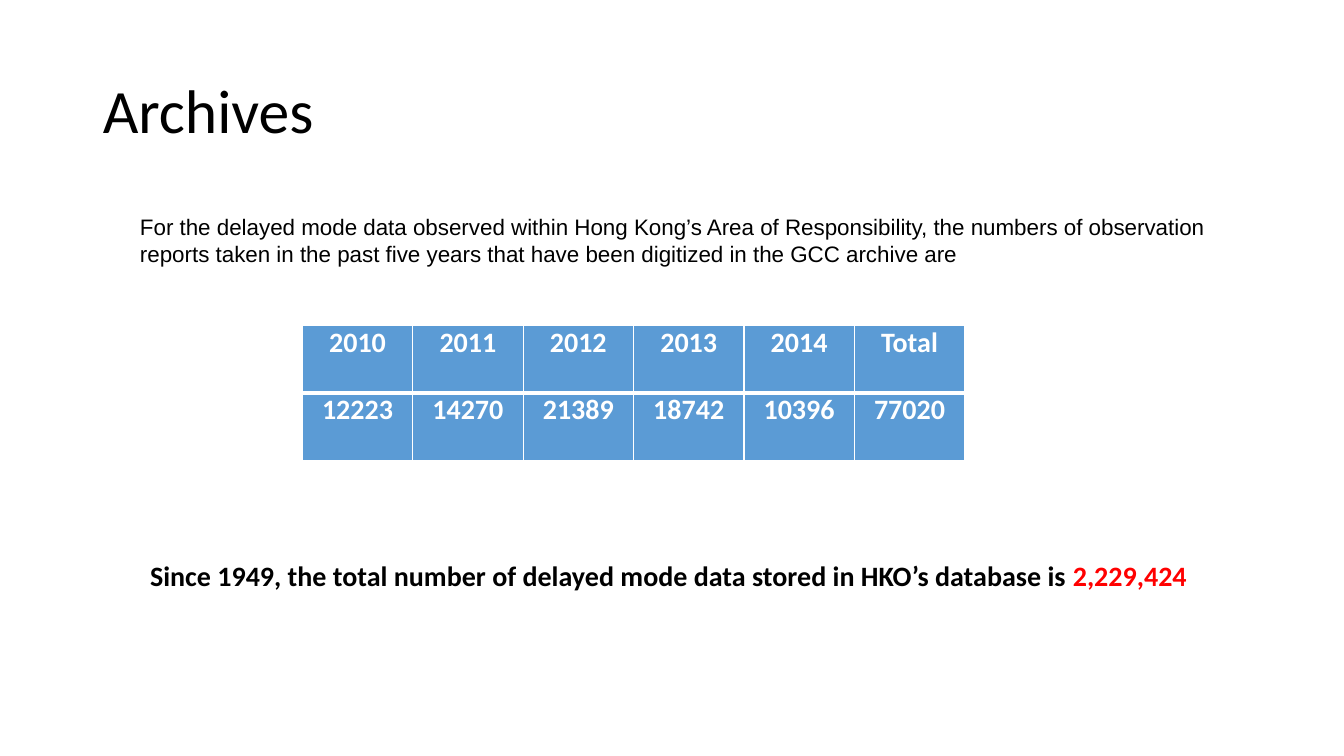
"""Build the Archives slide with its table of yearly report counts."""
import dataclasses

import lxml.etree
import pptx
import pptx.dml.color
import pptx.enum.text
import pptx.oxml.ns
import pptx.slide
import pptx.text.text
import pptx.util

WIDE = pptx.util.Inches(13.33)
HIGH = pptx.util.Inches(7.5)
TITLE_ONLY = 5
HUES = {"ink": "000000", "paper": "FFFFFF", "blue": "5B9BD5", "red": "FF0000"}
COUNTS = {
    "2010": "12223",
    "2011": "14270",
    "2012": "21389",
    "2013": "18742",
    "2014": "10396",
    "Total": "77020",
}


@dataclasses.dataclass(frozen=True)
class Box:
    """A frame in percent of the slide's width and height."""

    left: float
    top: float
    width: float
    height: float

    def frame(self) -> tuple[int, int, int, int]:
        """Return the frame in slide units."""
        return (
            int(WIDE * self.left / 100),
            int(HIGH * self.top / 100),
            int(WIDE * self.width / 100),
            int(HIGH * self.height / 100),
        )


@dataclasses.dataclass(frozen=True)
class Piece:
    """A run of text and its look."""

    text: str
    size: int
    font: str = "Calibri"
    hue: str = "ink"
    bold: bool = False


@dataclasses.dataclass(frozen=True)
class Note:
    """A text box with its lines of runs."""

    box: Box
    lines: tuple[tuple[Piece, ...], ...]
    anchor: pptx.enum.text.MSO_ANCHOR


TITLE = Box(6.9, 5.33, 86.27, 19.33)
TABLE = Box(22.5, 43.07, 49.29, 17.87)
NOTES = (
    Note(
        Box(9.68, 27.47, 82.22, 8.53),
        (
            (Piece("For the delayed mode data observed within Hong Kong’s Area of "
                   "Responsibility, the numbers of observation", 16, "Arial"),),
            (Piece("reports taken in the past five years that have been digitized "
                   "in the GCC archive are", 16, "Arial"),),
        ),
        pptx.enum.text.MSO_ANCHOR.MIDDLE,
    ),
    Note(
        Box(10.43, 73.2, 79.22, 5.87),
        (
            (
                Piece("Since 1949, the total number of delayed mode data stored in "
                      "HKO’s database is ", 20, bold=True),
                Piece("2,229,424", 20, hue="red", bold=True),
            ),
        ),
        pptx.enum.text.MSO_ANCHOR.TOP,
    ),
)


def color(hue: str) -> pptx.dml.color.RGBColor:
    """Look up a named colour."""
    return pptx.dml.color.RGBColor.from_string(HUES[hue])


def add_piece(para: pptx.text.text._Paragraph, piece: Piece) -> None:
    """Add one formatted run to a paragraph."""
    run = para.add_run()
    run.text = piece.text
    run.font.name = piece.font
    run.font.size = pptx.util.Pt(piece.size)
    run.font.bold = piece.bold
    run.font.color.rgb = color(piece.hue)


def add_title(slide: pptx.slide.Slide) -> None:
    """Place and fill the title."""
    title = slide.shapes.title
    title.left, title.top, title.width, title.height = TITLE.frame()
    title.text_frame.vertical_anchor = pptx.enum.text.MSO_ANCHOR.MIDDLE
    para = title.text_frame.paragraphs[0]
    para.alignment = pptx.enum.text.PP_ALIGN.LEFT
    para.line_spacing = 0.9
    add_piece(para, Piece("Archives", 44))


def add_note(slide: pptx.slide.Slide, note: Note) -> None:
    """Draw one text box."""
    frame = slide.shapes.add_textbox(*note.box.frame()).text_frame
    frame.word_wrap = False
    frame.auto_size = pptx.enum.text.MSO_AUTO_SIZE.SHAPE_TO_FIT_TEXT
    frame.vertical_anchor = note.anchor
    for rank, line in enumerate(note.lines):
        para = frame.add_paragraph() if rank else frame.paragraphs[0]
        for piece in line:
            add_piece(para, piece)


def add_edges(cell: pptx.table._Cell, edges: dict[str, int]) -> None:
    """Draw white cell borders of the given point widths."""
    qn = pptx.oxml.ns.qn
    props = cell._tc.get_or_add_tcPr()
    for rank, (side, width) in enumerate(edges.items()):
        line = lxml.etree.Element(qn(f"a:ln{side}"), w=str(pptx.util.Pt(width)))
        fill = lxml.etree.SubElement(line, qn("a:solidFill"))
        lxml.etree.SubElement(fill, qn("a:srgbClr"), val=HUES["paper"])
        props.insert(rank, line)


def add_counts(slide: pptx.slide.Slide) -> None:
    """Draw the table of counts by year."""
    rows = (tuple(COUNTS), tuple(COUNTS.values()))
    table = slide.shapes.add_table(len(rows), len(COUNTS), *TABLE.frame()).table
    for r, row in enumerate(rows):
        for c, text in enumerate(row):
            cell = table.cell(r, c)
            cell.fill.solid()
            cell.fill.fore_color.rgb = color("blue")
            cell.margin_left = cell.margin_right = pptx.util.Inches(0.07)
            cell.margin_top = cell.margin_bottom = 0
            para = cell.text_frame.paragraphs[0]
            para.alignment = pptx.enum.text.PP_ALIGN.CENTER
            add_piece(para, Piece(text, 20, hue="paper", bold=True))
            add_edges(cell, {"L": 1, "R": 1, "T": 3 if r else 1, "B": 1 if r else 3})


def main() -> None:
    """Build and save the slide."""
    deck = pptx.Presentation()
    deck.slide_width, deck.slide_height = WIDE, HIGH
    slide = deck.slides.add_slide(deck.slide_layouts[TITLE_ONLY])
    add_title(slide)
    add_counts(slide)
    for note in NOTES:
        add_note(slide, note)
    deck.save("out.pptx")


if __name__ == "__main__":
    main()
